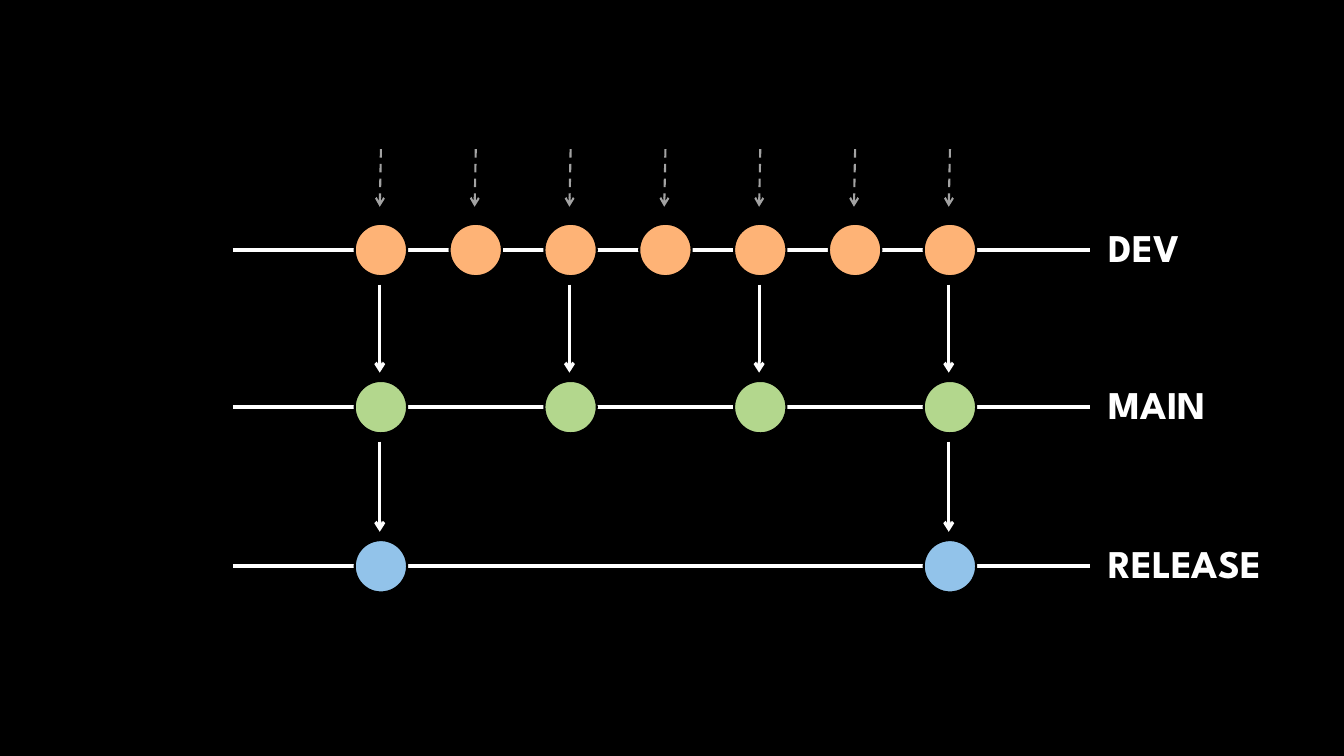
from lxml.etree import SubElement
from pptx import Presentation
from pptx.dml.color import RGBColor
from pptx.enum.dml import MSO_LINE
from pptx.enum.shapes import MSO_CONNECTOR, MSO_SHAPE
from pptx.enum.text import MSO_AUTO_SIZE
from pptx.oxml.ns import qn
from pptx.util import Cm, Pt

COLORS = {
    "background": "000000",
    "line": "FFFFFF",
    "incoming": "A3A3A3",
    "dev": "FEB376",
    "main": "B3D78D",
    "release": "92C3EA",
}
FONT = "League Spartan"

# Lengths in centimetres
FIRST_COMMIT, COMMIT_STEP, COMMIT_COUNT = 9.6, 2.39, 7
DIAMETER = 1.32
BRANCH_LEFT, BRANCH_RIGHT = 5.87, 27.46
LABEL_LEFT, LABEL_HEIGHT = 27.69, 1.45
ARROW_GAP = 0.87

# Name, height on the page, label width, every how many commits it has a node
BRANCHES = [
    ("dev", 6.3, 3.5, 1),
    ("main", 10.26, 3.5, 2),
    ("release", 14.27, 4.52, 6),
]


def color(name):
    return RGBColor.from_string(COLORS[name])


def commit_centers(every):
    return [FIRST_COMMIT + COMMIT_STEP * number
            for number in range(0, COMMIT_COUNT, every)]


def add_line(page, start, end, width, color_name="line", arrow=False, dashed=False):
    line = page.shapes.add_connector(
        MSO_CONNECTOR.STRAIGHT, *(Cm(value) for value in start + end))
    line.line.color.rgb = color(color_name)
    line.line.width = Pt(width)
    if dashed:
        line.line.dash_style = MSO_LINE.DASH
    properties = line._element.spPr
    if arrow:
        SubElement(properties.find(qn("a:ln")), qn("a:tailEnd"), type="arrow")
    SubElement(properties, qn("a:effectLst"))


def add_commit(page, center, height, color_name):
    commit = page.shapes.add_shape(
        MSO_SHAPE.OVAL, Cm(center - DIAMETER / 2), Cm(height - DIAMETER / 2),
        Cm(DIAMETER), Cm(DIAMETER))
    commit.shadow.inherit = False
    commit.fill.solid()
    commit.fill.fore_color.rgb = color(color_name)
    commit.line.color.rgb = color("background")
    commit.line.width = Pt(1.5)


def add_label(page, text, height, width):
    box = page.shapes.add_textbox(
        Cm(LABEL_LEFT), Cm(height - 0.8), Cm(width), Cm(LABEL_HEIGHT))
    frame = box.text_frame
    frame.word_wrap = True
    frame.auto_size = MSO_AUTO_SIZE.SHAPE_TO_FIT_TEXT
    frame.text = text
    font = frame.paragraphs[0].runs[0].font
    font.name = FONT
    font.size = Pt(28)
    font.bold = True
    font.color.rgb = color("line")


def add_branch(page, name, height, label_width, every):
    add_line(page, (BRANCH_LEFT, height), (BRANCH_RIGHT, height), 3)
    for center in commit_centers(every):
        add_commit(page, center, height, name)
    add_label(page, name.upper(), height, label_width)


def main():
    deck = Presentation()
    deck.slide_width, deck.slide_height = Cm(33.87), Cm(19.05)
    page = deck.slides.add_slide(deck.slide_layouts[6])
    page.background.fill.solid()
    page.background.fill.fore_color.rgb = color("background")

    # Branches with their commits and labels
    for branch in BRANCHES:
        add_branch(page, *branch)

    # Merges from each branch down to the next
    for upper, lower in zip(BRANCHES, BRANCHES[1:]):
        for center in commit_centers(lower[3]):
            add_line(page, (center - 0.03, upper[1] + ARROW_GAP),
                     (center - 0.03, lower[1] - ARROW_GAP), 2.25, arrow=True)

    # Incoming changes, leaning slightly left
    for center in commit_centers(1):
        add_line(page, (center, 3.76), (center - 0.03, 5.21), 1.5,
                 "incoming", arrow=True, dashed=True)

    deck.save("out.pptx")


if __name__ == "__main__":
    main()
